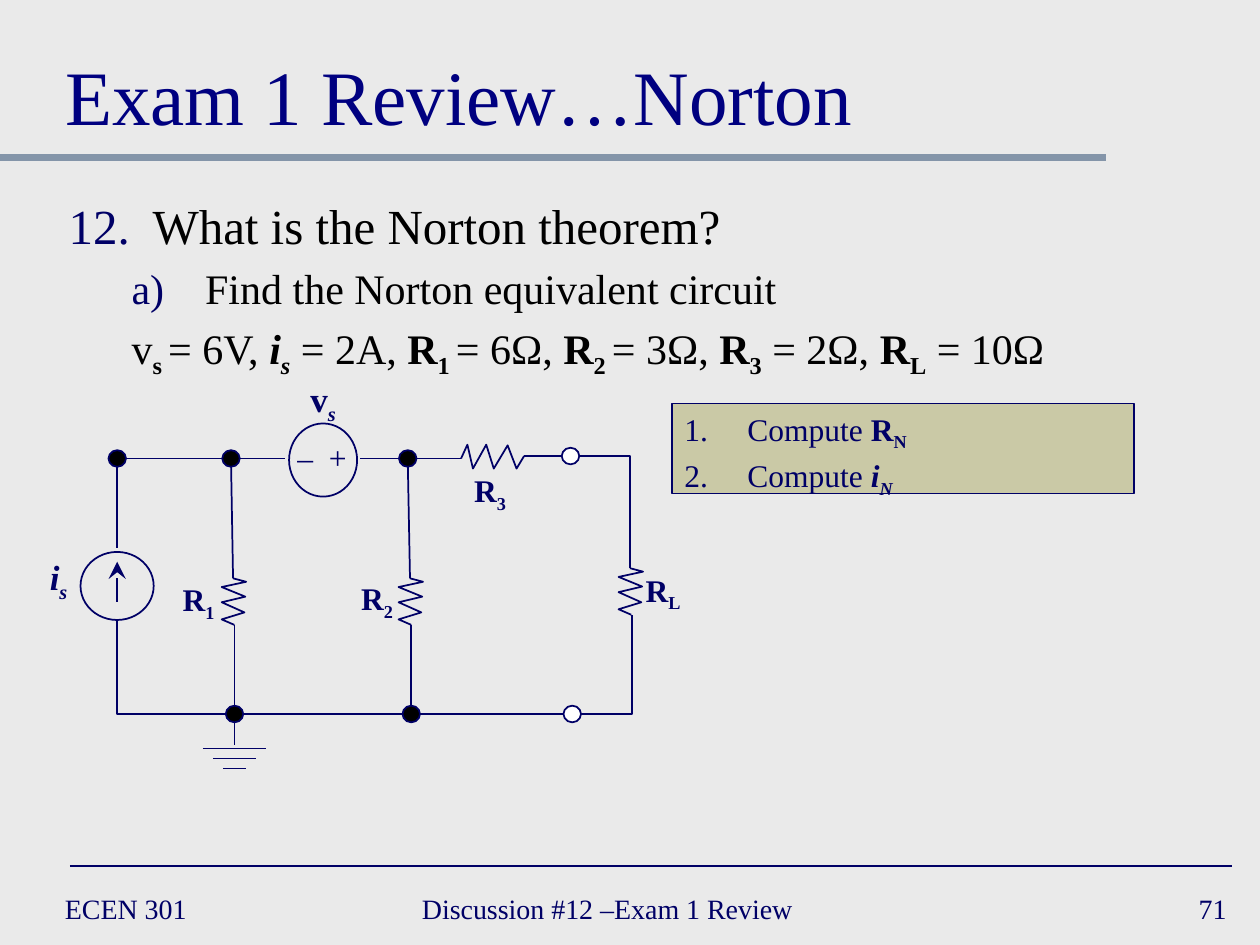
from lxml.etree import SubElement
from pptx import Presentation
from pptx.dml.color import RGBColor
from pptx.enum.shapes import MSO_CONNECTOR, MSO_SHAPE
from pptx.enum.text import MSO_ANCHOR, MSO_AUTO_SIZE, PP_ALIGN
from pptx.oxml.ns import qn
from pptx.util import Pt

FONT = "Times New Roman"
COLORS = {"bg": "EAEAEA", "navy": "000066", "title": "000080", "text": "000000",
          "rule": "8495A9", "box": "ACA964", "node": "000000", "terminal": "FFFFFF"}

# Content: a run is (text, style); b bold, i italic, s subscript
TITLE = "Exam 1 Review…Norton"
# runs, size, level, left margin, hanging indent, numbering, first number
BODY = [
    ([("What is the Norton theorem?", "")], 28, 0, 48, 48, "arabicPeriod", 12),
    ([("Find the Norton equivalent circuit", "")], 24, 1, 78, 42, "alphaLcParenR", 1),
    ([("v", ""), ("s ", "bs"), ("= 6V, ", ""), ("i", "bi"), ("s", "bis"), (" = 2A, ", ""),
      ("R", "b"), ("1 ", "bs"), ("= 6Ω, ", ""), ("R", "b"), ("2 ", "bs"), ("= 3Ω, ", ""),
      ("R", "b"), ("3", "bs"), (" = 2Ω, ", ""), ("R", "b"), ("L", "bs"), (" = 10Ω", "")],
     24, 1, 78, 42, None, 1),
]
STEPS = [[("Compute ", ""), ("R", "b"), ("N", "bs")],
         [("Compute ", ""), ("i", "bi"), ("N", "bis")]]
FOOTERS = [("ECEN 301", 30, 156, PP_ALIGN.LEFT),
           ("Discussion #12 –Exam 1 Review", 234, 276, PP_ALIGN.LEFT),
           ("71", 558, 150, PP_ALIGN.RIGHT)]
# runs, size, centre x, top
LABELS = [
    ([("i", "bi"), ("s", "bis")], 20, 33.5, 314),
    ([("R", "b"), ("1", "bs")], 18, 113.5, 328),
    ([("R", "b"), ("2", "bs")], 18, 215.5, 327.5),
    ([("R", "b"), ("L", "bs")], 18, 379, 322.5),
    ([("R", "b"), ("3", "bs")], 18, 280, 265.7),
    ([("v", "b"), ("s", "bis")], 20, 184.7, 212.4),
    ([("–", "")], 18, 174.5, 247),
    ([("+", "")], 18, 193, 247),
]

# Circuit geometry
TOP, BOTTOM, OUT = 262, 408, 260.6
X_IS, X_R1, X_R2 = 67, 134, 235
NODES = [(X_IS, TOP), (132, TOP), (233, TOP), (X_R1, BOTTOM), (X_R2, BOTTOM)]
TERMINALS = [(326, OUT), (327, BOTTOM)]
SOURCES = [(46, 315.4, 41.8, 38.9), (165.2, 242, 38.9, 41.8)]
WIRES = [
    (X_IS, 313, X_IS, TOP), (X_IS, TOP, 132, TOP), (132, TOP, 163, TOP),
    (206, TOP, 233, TOP), (233, TOP, 263.5, TOP), (299.5, OUT, 326, OUT),
    (132, TOP, 133.2, 330.5), (233, TOP, 234.3, 330.5),
    (X_R1, 357, X_R1, BOTTOM), (X_R2, 357, X_R2, BOTTOM),
    (X_R1, BOTTOM, X_R2, BOTTOM), (X_R2, BOTTOM, 327, BOTTOM),
    (X_R1, BOTTOM, X_R1, 426),
]
ELBOWS = [(X_R1, BOTTOM, X_IS, 354), (332, BOTTOM, 361, 351.3), (331, OUT, 360, 324.7)]
GROUND = [(36, 427.7), (24.5, 433.4), (13, 439.2)]
ZIGZAG_V = [(0, 0), (7.5, 2), (-6.5, 5), (7, 10.5), (-6.5, 13.7), (6.5, 19.5),
            (-6.5, 23.5), (0.7, 26.6)]
ZIGZAG_H = [(0, 0), (3.6, -7.9), (6.8, 5.8), (14.4, -7.9), (18.7, 5.8), (26.6, -7.5),
            (31.7, 5.8), (36, -1.4)]
RESISTORS = [(133.2, 330.5, ZIGZAG_V), (234.3, 330.5, ZIGZAG_V),
             (360, 324.7, ZIGZAG_V), (263.5, TOP, ZIGZAG_H)]


def rgb(name):
    return RGBColor.from_string(COLORS[name])


def place(sp, *box):
    sp.left, sp.top, sp.width, sp.height = map(Pt, box)


def add_runs(p, runs, size, color="navy"):
    for text, style in runs:
        r = p.add_run()
        r.text = text
        f = r.font
        f.name, f.size, f.color.rgb = FONT, Pt(size), rgb(color)
        f.bold, f.italic = "b" in style, "i" in style
        if "s" in style:
            r._r.get_or_add_rPr().set("baseline", "-25000")


def number(p, margin, hang, kind, start=1):
    pPr = p._p.get_or_add_pPr()
    pPr.set("marL", str(Pt(margin)))
    pPr.set("indent", str(-Pt(hang)))
    if kind is None:
        SubElement(pPr, qn("a:buNone"))
        return
    SubElement(SubElement(pPr, qn("a:buClr")), qn("a:srgbClr"), val=COLORS["navy"])
    SubElement(pPr, qn("a:buFont"), typeface=FONT)
    SubElement(pPr, qn("a:buAutoNum"), type=kind, startAt=str(start))


def add_text(runs, size, x, y, w, h, align, anchor=MSO_ANCHOR.TOP):
    tf = s.shapes.add_textbox(Pt(x), Pt(y), Pt(w), Pt(h)).text_frame
    tf.word_wrap, tf.vertical_anchor = True, anchor
    tf.paragraphs[0].alignment = align
    add_runs(tf.paragraphs[0], runs, size)


def add_line(x1, y1, x2, y2, color="navy", width=1, kind=MSO_CONNECTOR.STRAIGHT):
    c = s.shapes.add_connector(kind, Pt(x1), Pt(y1), Pt(x2), Pt(y2))
    c.line.color.rgb, c.line.width = rgb(color), Pt(width)
    SubElement(c._element.spPr, qn("a:effectLst"))
    return c


def outline(sp, fill=None):
    sp.shadow.inherit = False
    sp.line.color.rgb, sp.line.width = rgb("navy"), Pt(1)
    if fill:
        sp.fill.solid()
        sp.fill.fore_color.rgb = rgb(fill)
    else:
        sp.fill.background()


def add_preset(kind, x, y, w, h, fill=None):
    sp = s.shapes.add_shape(kind, Pt(x), Pt(y), Pt(w), Pt(h))
    outline(sp, fill)
    return sp


prs = Presentation()
prs.slide_width, prs.slide_height = Pt(720), Pt(540)
s = prs.slides.add_slide(prs.slide_layouts[1])
s.background.fill.solid()
s.background.fill.fore_color.rgb = rgb("bg")

# Rules and footer
add_line(0, 90, 632, 90, "rule", 4)
add_line(40, 495, 704, 495)
for text, x, w, align in FOOTERS:
    add_text([(text, "")], 16, x, 504, w, 30, align, MSO_ANCHOR.MIDDLE)

# Title
title = s.shapes.title
place(title, 30, 12, 660, 72)
tf = title.text_frame
tf.auto_size, tf.vertical_anchor = MSO_AUTO_SIZE.NONE, MSO_ANCHOR.BOTTOM
tf.paragraphs[0].alignment = PP_ALIGN.LEFT
add_runs(tf.paragraphs[0], [(TITLE, "")], 44, "title")

# Question
body = s.placeholders[1]
place(body, 32, 108, 658, 108)
tf = body.text_frame
tf.auto_size = MSO_AUTO_SIZE.NONE
for i, (runs, size, level, margin, hang, kind, start) in enumerate(BODY):
    p = tf.paragraphs[0] if i == 0 else tf.add_paragraph()
    p.level, p.space_before = level, Pt(5 if i else 0)
    number(p, margin, hang, kind, start)
    add_runs(p, runs, size, "text")

# Steps box
box = add_preset(MSO_SHAPE.RECTANGLE, 384, 230.5, 264, 51.5, "box")
clr = box._element.spPr.find(qn("a:solidFill")).find(qn("a:srgbClr"))
SubElement(clr, qn("a:alpha"), val="50000")
tf = box.text_frame
tf.vertical_anchor = MSO_ANCHOR.TOP
for i, runs in enumerate(STEPS):
    p = tf.paragraphs[0] if i == 0 else tf.add_paragraph()
    p.alignment, p.space_before = PP_ALIGN.LEFT, Pt(2 if i else 0)
    number(p, 36, 36, "arabicPeriod")
    add_runs(p, runs, 18)

# Wires, ground and resistors
for wire in WIRES:
    add_line(*wire)
for elbow in ELBOWS:
    c = add_line(*elbow, kind=MSO_CONNECTOR.ELBOW)
    c._element.spPr.find(qn("a:prstGeom")).set("prst", "bentConnector2")
for w, y in GROUND:
    add_line(X_R1 - w / 2, y, X_R1 + w / 2, y)
for x, y, zigzag in RESISTORS:
    pts = [(Pt(x + dx), Pt(y + dy)) for dx, dy in zigzag]
    fb = s.shapes.build_freeform(*pts[0])
    fb.add_line_segments(pts[1:], close=False)
    outline(fb.convert_to_shape())

# Sources, nodes and terminals
for source in SOURCES:
    add_preset(MSO_SHAPE.OVAL, *source)
arrow = add_line(X_IS, 344, X_IS, 321)
SubElement(arrow.line._get_or_add_ln(), qn("a:tailEnd"), type="stealth", w="lg", len="lg")
for points, fill in ((NODES, "node"), (TERMINALS, "terminal")):
    for x, y in points:
        add_preset(MSO_SHAPE.OVAL, x - 5, y - 4.75, 10, 9.5, fill)

# Circuit labels
for runs, size, x, y in LABELS:
    add_text(runs, size, x - 21, y, 42, 29, PP_ALIGN.CENTER)

prs.save("out.pptx")
